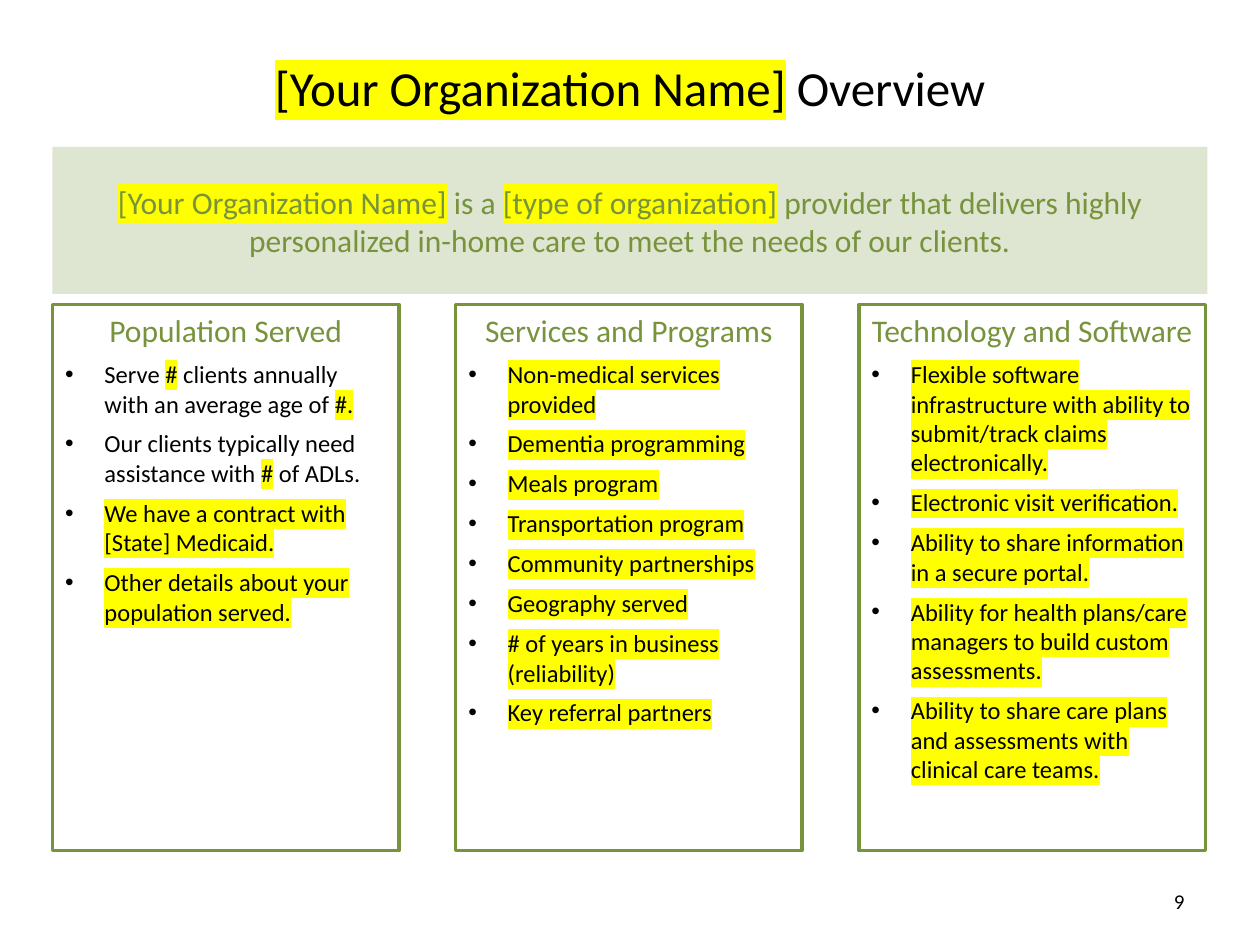
"""Build the organization overview slide with a mission banner and three list cards."""
import lxml.etree
import pptx
import pptx.dml.color
import pptx.enum.shapes
import pptx.enum.text
import pptx.oxml.ns
import pptx.util

Pt = pptx.util.Pt
RGBColor = pptx.dml.color.RGBColor
ALIGN = pptx.enum.text.PP_ALIGN
ANCHOR = pptx.enum.text.MSO_ANCHOR
qn = pptx.oxml.ns.qn

GREEN = RGBColor(0x77, 0x93, 0x3C)
BLACK = RGBColor(0, 0, 0)
YELLOW = RGBColor(0xFF, 0xFF, 0)

FRAME = {"word_wrap": True, "auto_size": pptx.enum.text.MSO_AUTO_SIZE.NONE}
MARGIN, CARD_PITCH = 30, 230.4
HANGING = Pt(22.5)

# Text between bars is highlighted.
TITLE = "|[Your Organization Name]| Overview"
MISSION = (
    "|[Your Organization Name]| is a |[type of organization]| provider that "
    "delivers highly personalized in-home care to meet the needs of our clients."
)
CARDS = {
    "Population Served": [
        "Serve |#| clients annually with an average age of |#.|",
        "Our clients typically need assistance with |#| of ADLs.",
        "|We have a contract with [State] Medicaid.|",
        "|Other details about your population served.|",
    ],
    "Services and Programs": [
        "|Non-medical services provided|",
        "|Dementia programming|",
        "|Meals program|",
        "|Transportation program|",
        "|Community partnerships|",
        "|Geography served|",
        "|# of years in business (reliability)|",
        "|Key referral partners|",
    ],
    "Technology and Software": [
        "|Flexible software infrastructure with ability to submit/track claims electronically.|",
        "|Electronic visit verification.|",
        "|Ability to share information in a secure portal.|",
        "|Ability for health plans/care managers to build custom assessments.|",
        "|Ability to share care plans and assessments with clinical care teams.|",
    ],
}


def apply(target, values):
    """Set each attribute of the target from a dict."""
    for attribute, value in values.items():
        setattr(target, attribute, value)


def place(shape, left, top, width, height):
    """Move and size a shape, in points."""
    apply(shape, {"left": Pt(left), "top": Pt(top), "width": Pt(width), "height": Pt(height)})


def write(paragraph, marked_text, size, color, align, space_before=0):
    """Write text whose parts between bars are highlighted."""
    apply(paragraph, {"alignment": align, "space_before": Pt(space_before), "line_spacing": 1.0})
    for position, part in enumerate(marked_text.split("|")):
        if not part:
            continue
        run = paragraph.add_run()
        run.text = part
        run.font.color.rgb = color
        apply(run.font, {"size": Pt(size), "name": "Calibri", "bold": False})
        if position % 2:
            highlight = lxml.etree.Element(qn("a:highlight"))
            lxml.etree.SubElement(highlight, qn("a:srgbClr"), val=str(YELLOW))
            run.font._element.find(qn("a:latin")).addprevious(highlight)


def set_bullet(paragraph, bullet=None):
    """Give a paragraph a hanging bullet, or neither bullet nor indent."""
    properties = paragraph._p.get_or_add_pPr()
    indent = HANGING if bullet else 0
    properties.set("marL", str(int(indent)))
    properties.set("indent", str(-int(indent)))
    if bullet:
        lxml.etree.SubElement(properties, qn("a:buChar"), char=bullet)
    else:
        lxml.etree.SubElement(properties, qn("a:buNone"))


def fill_title(title):
    """Place and write the slide title."""
    place(title, 36, 21.6, 648, 56)
    apply(title.text_frame, {**FRAME, "vertical_anchor": ANCHOR.MIDDLE})
    write(title.text_frame.paragraphs[0], TITLE, 28, BLACK, ALIGN.CENTER)


def add_banner(slide):
    """Add the translucent mission banner."""
    banner = slide.shapes.add_shape(pptx.enum.shapes.MSO_SHAPE.RECTANGLE, 0, 0, 0, 0)
    place(banner, MARGIN, 84, 660, 84)
    banner.shadow.inherit = False
    banner.fill.solid()
    banner.fill.fore_color.rgb = GREEN
    tint = banner._element.spPr.find(qn("a:solidFill"))[0]
    lxml.etree.SubElement(tint, qn("a:alpha"), val="24000")
    banner.line.fill.background()
    apply(banner.text_frame, {**FRAME, "vertical_anchor": ANCHOR.MIDDLE})
    write(banner.text_frame.paragraphs[0], MISSION, 18, GREEN, ALIGN.CENTER)


def fill_card(card, column, heading, points):
    """Outline a body placeholder and write its heading and bullets."""
    place(card, MARGIN + column * CARD_PITCH, 174, 198, 312)
    card.line.color.rgb = GREEN
    card.line.width = Pt(2)
    frame = card.text_frame
    apply(frame, {**FRAME, "vertical_anchor": ANCHOR.TOP})
    write(frame.paragraphs[0], heading, 18, GREEN, ALIGN.CENTER)
    set_bullet(frame.paragraphs[0])
    for point in points:
        paragraph = frame.add_paragraph()
        write(paragraph, point, 14, BLACK, ALIGN.LEFT, space_before=6)
        set_bullet(paragraph, "•")


def add_page_number(slide, number):
    """Add the page number at the lower right."""
    page = slide.shapes.add_textbox(0, 0, 0, 0)
    place(page, 516, 500.4, 168, 28.8)
    apply(page.text_frame, {**FRAME, "vertical_anchor": ANCHOR.MIDDLE})
    write(page.text_frame.paragraphs[0], number, 12, BLACK, ALIGN.RIGHT)


def main():
    """Build and save the slide."""
    deck = pptx.Presentation()
    apply(deck, {"slide_width": Pt(720), "slide_height": Pt(540)})
    slide = deck.slides.add_slide(deck.slide_layouts.get_by_name("Comparison"))
    title, *bodies = slide.placeholders
    fill_title(title)
    add_banner(slide)
    for column, (body, (heading, points)) in enumerate(zip(bodies, CARDS.items())):
        fill_card(body, column, heading, points)
    for unused in bodies[len(CARDS):]:
        unused._element.getparent().remove(unused._element)
    add_page_number(slide, "9")
    deck.save("out.pptx")


if __name__ == "__main__":
    main()
